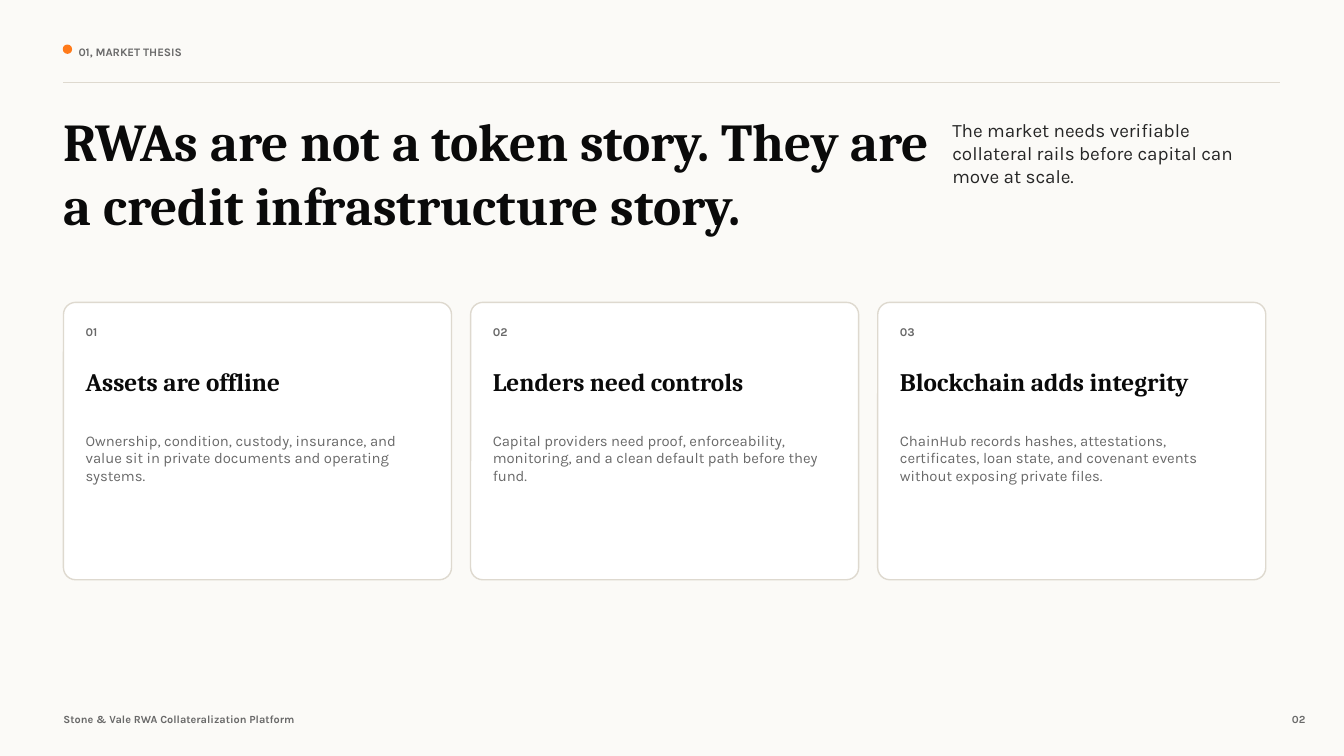
from pptx import Presentation
from pptx.dml.color import RGBColor
from pptx.enum import shapes, text
from pptx.oxml.ns import qn
from pptx.util import Cm, Pt
from lxml import etree

PAPER = RGBColor(0xFB, 0xFA, 0xF7)
WHITE = RGBColor(0xFF, 0xFF, 0xFF)
ORANGE = RGBColor(0xFF, 0x7A, 0x1A)
BORDER = RGBColor(0xDE, 0xD9, 0xCF)
INK = RGBColor(0x0A, 0x0A, 0x0A)
CHARCOAL = RGBColor(0x26, 0x26, 0x26)
GRAY = RGBColor(0x69, 0x69, 0x69)
SERIF = "Cambria"
SANS = "Karla"

presentation = Presentation()
presentation.slide_width = Cm(33.87)
presentation.slide_height = Cm(19.05)
slide = presentation.slides.add_slide(presentation.slide_layouts[5])
slide.background.fill.solid()
slide.background.fill.fore_color.rgb = PAPER


def write(words, box, size, font, color, bold=False, middle=False, right=False, shape=None):
    left, top, width, height = [Cm(length) for length in box]
    if shape is None:
        shape = slide.shapes.add_textbox(left, top, width, height)
    shape.left, shape.top, shape.width, shape.height = left, top, width, height
    frame = shape.text_frame
    frame.text = words
    frame.word_wrap = True
    frame.auto_size = text.MSO_AUTO_SIZE.NONE
    frame.margin_left = frame.margin_top = frame.margin_right = frame.margin_bottom = 0
    frame.vertical_anchor = text.MSO_ANCHOR.MIDDLE if middle else text.MSO_ANCHOR.TOP
    paragraph = frame.paragraphs[0]
    paragraph.alignment = text.PP_ALIGN.RIGHT if right else text.PP_ALIGN.LEFT
    run_font = paragraph.runs[0].font
    run_font.name = font
    run_font.size = Pt(size)
    run_font.bold = bold
    run_font.color.rgb = color


def draw(kind, box, fill, line):
    shape = slide.shapes.add_shape(kind, *[Cm(length) for length in box])
    shape.shadow.inherit = False
    shape.fill.solid()
    shape.fill.fore_color.rgb = fill
    shape.line.color.rgb = line
    shape.line.width = Pt(1)
    return shape


MARGIN = 1.6

draw(shapes.MSO_SHAPE.OVAL, (MARGIN, 1.14, 0.2, 0.2), ORANGE, ORANGE)
write("01, MARKET THESIS", (1.98, 1.07, 18.29, 0.46), 8.2, SANS, GRAY, bold=True, middle=True)

rule = slide.shapes.add_connector(
    shapes.MSO_CONNECTOR.STRAIGHT, Cm(MARGIN), Cm(2.08), Cm(32.26), Cm(2.08))
rule.line.color.rgb = BORDER
rule.line.width = Pt(1)
etree.SubElement(rule._element.spPr, qn("a:effectLst"))

write("RWAs are not a token story. They are a credit infrastructure story.",
      (MARGIN, 2.72, 21.84, 3.45), 38, SERIF, INK, bold=True, shape=slide.shapes.title)
write("The market needs verifiable collateral rails before capital can move at scale.",
      (24, 3, 7.24, 2.16), 13.5, SANS, CHARCOAL)

CARD_WIDTH = 9.78
CARD_PITCH = 10.26
CARD_PADDING = 0.56
cards = [
    ("Assets are offline",
     "Ownership, condition, custody, insurance, and value sit in private documents "
     "and operating systems."),
    ("Lenders need controls",
     "Capital providers need proof, enforceability, monitoring, and a clean default "
     "path before they fund."),
    ("Blockchain adds integrity",
     "ChainHub records hashes, attestations, certificates, loan state, and covenant "
     "events without exposing private files."),
]
for index, (heading, body) in enumerate(cards):
    card_left = MARGIN + index * CARD_PITCH
    card = draw(shapes.MSO_SHAPE.ROUNDED_RECTANGLE,
                (card_left, 7.62, CARD_WIDTH, 6.99), WHITE, BORDER)
    card.adjustments[0] = 0.044
    text_left = card_left + CARD_PADDING
    text_width = CARD_WIDTH - 2 * CARD_PADDING
    write(f"{index + 1:02}", (text_left, 8.13, 1.14, 0.46), 8.5, SANS, GRAY,
          bold=True, middle=True)
    write(heading, (text_left, 9.22, text_width, 1.37), 18, SERIF, INK, bold=True)
    write(body, (text_left, 10.87, text_width, 3.23), 10.6, SANS, GRAY)

write("Stone & Vale RWA Collateralization Platform", (MARGIN, 17.88, 12.7, 0.46),
      7.8, SANS, GRAY, bold=True, middle=True)
write("02", (31.12, 17.88, 1.78, 0.46), 7.8, SANS, GRAY, bold=True, middle=True, right=True)

presentation.save("out.pptx")
